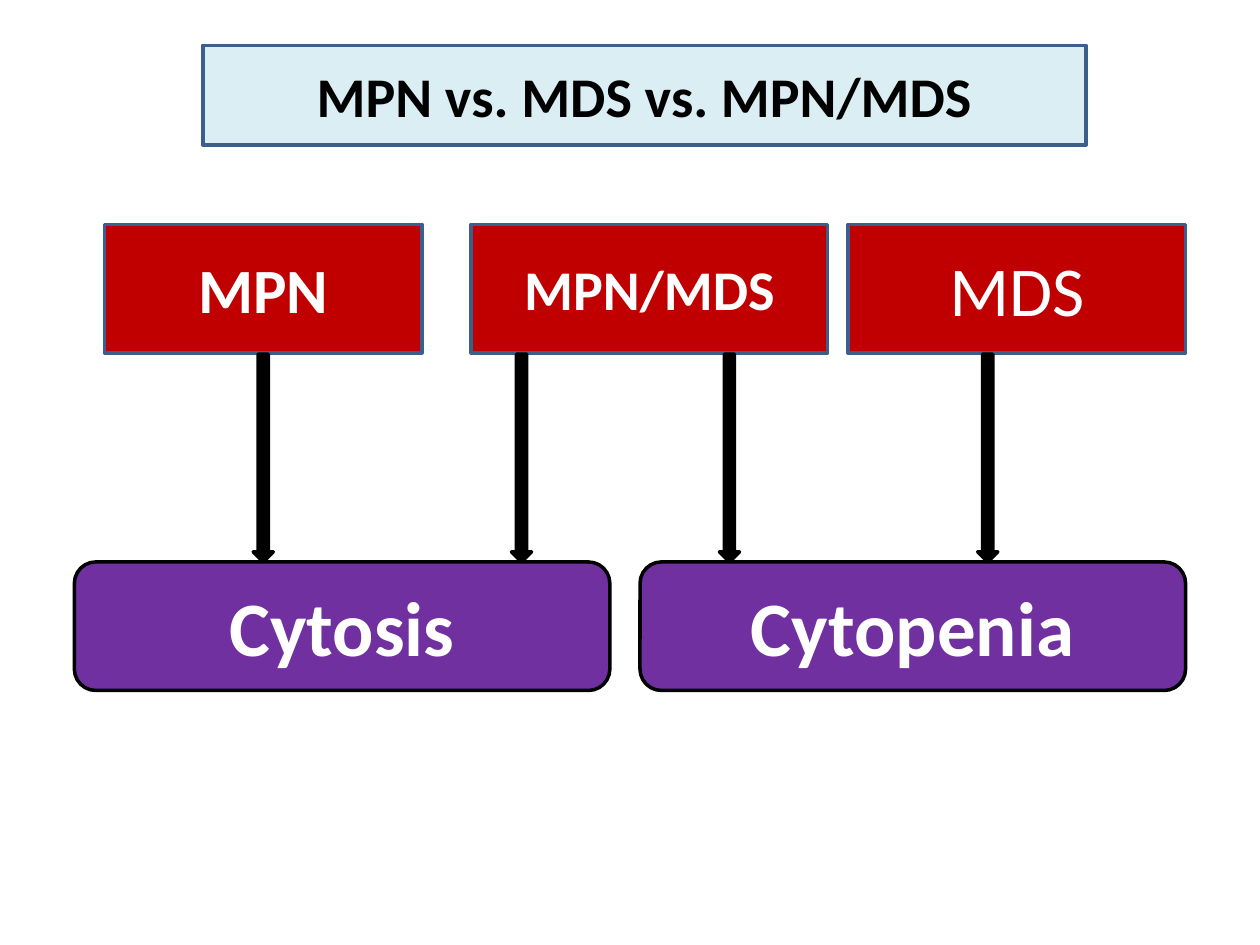
from pptx import Presentation
from pptx.dml.color import RGBColor
from pptx.enum.shapes import MSO_SHAPE
from pptx.enum.text import MSO_ANCHOR, PP_ALIGN
from pptx.util import Inches, Pt

RECT, ROUND, ARROW = MSO_SHAPE.RECTANGLE, MSO_SHAPE.ROUNDED_RECTANGLE, MSO_SHAPE.DOWN_ARROW
MIDDLE, CENTER = MSO_ANCHOR.MIDDLE, PP_ALIGN.CENTER
FONT = "Calibri"
BLACK, WHITE, BLUE = "000000", "FFFFFF", "3A5F8C"
RED, PURPLE, PALE = "C00000", "7030A0", "DBEEF4"

TITLE = "MPN vs. MDS vs. MPN/MDS"
DISEASES = [("MPN", 0.83, 2.52, 36, True),
            ("MPN/MDS", 3.74, 2.83, 32, True),
            ("MDS", 6.73, 2.68, 40, False)]
FINDINGS = [("Cytosis", 0.59, 4.25, 44, True),
            ("Cytopenia", 5.08, 4.33, 44, True)]
ARROW_LEFTS = [2.01, 4.06, 5.71, 7.76]
DISEASE_TOP, FINDING_TOP, BOX_H = 1.78, 4.46, 1.02
ARROW_TOP, ARROW_W = 2.81, 0.16


def rgb(value):
    """Turn a hex string into a colour."""
    return RGBColor.from_string(value)


def paint(sp, fill, line):
    """Give a shape its fill and outline."""
    sp.fill.solid()
    sp.fill.fore_color.rgb = rgb(fill)
    sp.line.color.rgb = rgb(line)
    sp.line.width = Pt(2)


def write(sp, text, size=32, color=WHITE, bold=True):
    """Write one centred line in a shape."""
    tf = sp.text_frame
    tf.word_wrap = True
    tf.vertical_anchor = MIDDLE
    p = tf.paragraphs[0]
    p.alignment = CENTER
    r = p.add_run()
    r.text = text
    r.font.name, r.font.size, r.font.bold = FONT, Pt(size), bold
    r.font.color.rgb = rgb(color)


def add_shape(s, kind, left, top, width, height, fill, line):
    """Add a painted preset shape without a shadow."""
    sp = s.shapes.add_shape(kind, Inches(left), Inches(top), Inches(width), Inches(height))
    sp.shadow.inherit = False
    paint(sp, fill, line)
    return sp


def main():
    """Build the slide and save it."""
    prs = Presentation()
    prs.slide_width, prs.slide_height = Inches(10), Inches(7.5)
    s = prs.slides.add_slide(prs.slide_layouts[5])

    title = s.shapes.title
    title.left, title.top = Inches(1.61), Inches(0.36)
    title.width, title.height = Inches(7.01), Inches(0.79)
    paint(title, PALE, BLUE)
    write(title, TITLE, color=BLACK)

    rows = [(DISEASES, RECT, DISEASE_TOP, RED, BLUE),
            (FINDINGS, ROUND, FINDING_TOP, PURPLE, BLACK)]
    for boxes, kind, top, fill, line in rows:
        for text, left, width, size, bold in boxes:
            sp = add_shape(s, kind, left, top, width, BOX_H, fill, line)
            write(sp, text, size=size, bold=bold)

    for left in ARROW_LEFTS:
        add_shape(s, ARROW, left, ARROW_TOP, ARROW_W, FINDING_TOP - ARROW_TOP, BLACK, BLACK)

    prs.save("out.pptx")


if __name__ == "__main__":
    main()
